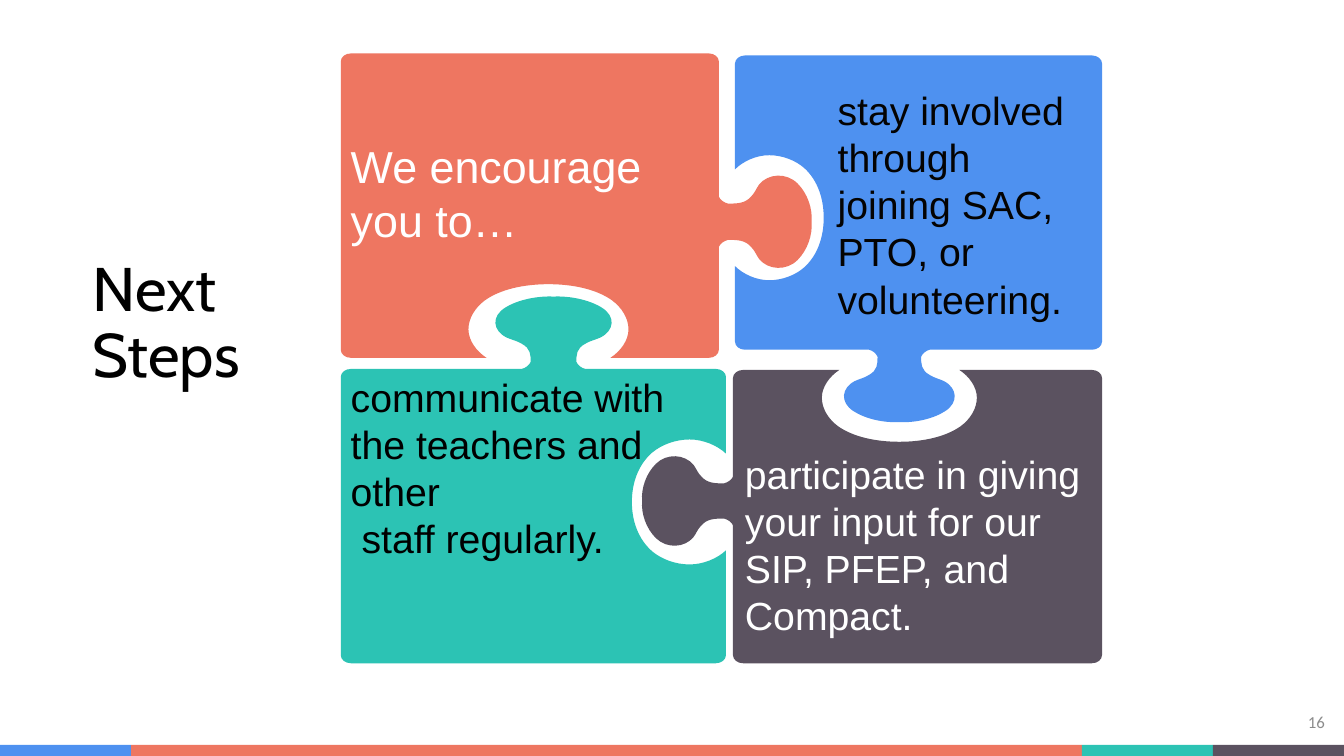
from dataclasses import dataclass

from lxml import etree
from pptx import Presentation
from pptx.dml.color import RGBColor
from pptx.enum.shapes import MSO_SHAPE
from pptx.enum.text import MSO_ANCHOR, MSO_AUTO_SIZE, PP_ALIGN
from pptx.oxml.ns import qn
from pptx.util import Inches, Pt

RECT = MSO_SHAPE.RECTANGLE
TOP = MSO_ANCHOR.TOP
NO_FIT = MSO_AUTO_SIZE.NONE
LEFT, RIGHT = PP_ALIGN.LEFT, PP_ALIGN.RIGHT


@dataclass(frozen=True)
class Theme:
    coral: str = "EE7661"
    blue: str = "4E91F0"
    teal: str = "2CC3B4"
    plum: str = "5B5260"
    black: str = "000000"
    ink: str = "040302"
    white: str = "FFFFFF"
    gray: str = "8C8C8C"
    title_font: str = "Cabin"
    body_font: str = "Arial"
    number_font: str = "Calibri"
    title_size: int = 44
    lead_size: int = 32
    body_size: int = 28
    number_size: int = 12


THEME = Theme()

TITLE = "Next Steps"
PAGE_NUMBER = "16"
INVOLVED = ["stay involved through joining SAC, PTO, or volunteering."]
INPUT = ["participate in giving your input for our SIP, PFEP, and Compact."]

# colour, width; laid side by side along the bottom edge
FOOTER_BANDS = [(THEME.blue, 1.3), (THEME.coral, 9.43),
                (THEME.teal, 1.3), (THEME.plum, 1.3)]
FOOTER_TOP, FOOTER_HEIGHT = 7.39, 0.11

# Half profiles as chained cubic curves: (distance from edge, distance from axis)
KNOB = [(0, .25), (.01, .22), (.05, .19), (.09, .18), (.18, .18), (.26, .18),
        (.32, .25), (.36, .29), (.37, .33), (.4, .37), (.49, .48), (.67, .49),
        (.78, .38), (.88, .28), (.93, .13), (.92, 0)]
SOCKET = [(0, .48), (-.08, .56), (-.21, .62), (-.34, .62), (-.47, .62),
          (-.6, .57), (-.69, .49), (-.82, .37), (-.88, .19), (-.88, 0)]

# colour, body (left, top, right, bottom),
# joints {side: (profile, axis, depth scale, width scale)}, top inset, text size, text colour, lines
PIECES = [
    (THEME.coral, (3.38, .53, 7.13, 3.55),
     {"right": (KNOB, 2.2, 1, 1), "bottom": (SOCKET, 5.44, .83, 1.28)},
     .85, THEME.lead_size, THEME.white, ["We encourage", "you to…"]),
    (THEME.blue, (7.29, .55, 10.93, 3.47),
     {"left": (SOCKET, 2.16, 1, 1), "bottom": (KNOB, 8.92, .78, 1.2)},
     0, THEME.body_size, THEME.ink, []),
    (THEME.teal, (3.38, 3.66, 7.2, 6.58),
     {"top": (KNOB, 5.49, .78, 1.26), "right": (SOCKET, 4.98, 1.06, 1)},
     .77, THEME.body_size, THEME.black,
     ["communicate with the teachers and other", " staff regularly."]),
    (THEME.plum, (7.27, 3.67, 10.93, 6.58),
     {"left": (KNOB, 4.97, .98, .97), "top": (SOCKET, 8.92, .81, 1.24)},
     0, THEME.body_size, THEME.white, []),
]

# left, top, width, height, colour, lines
CAPTIONS = [(8.21, .81, 2.7, 2.46, THEME.ink, INVOLVED),
            (7.29, 4.42, 3.65, 1.99, THEME.white, INPUT)]

CORNER_X, CORNER_Y = .1, .08
ROUNDNESS = .55


def color(code):
    return RGBColor.from_string(code)


def toward(start, end):
    """Control point of a rounded corner, on the way from start to end."""
    return tuple(a + ROUNDNESS * (b - a) for a, b in zip(start, end))


def piece_segments(body, joints):
    """Clockwise segments: one point for a line, three for a cubic curve."""
    left, top, right, bottom = body
    near_x, far_x = left + CORNER_X, right - CORNER_X
    near_y, far_y = top + CORNER_Y, bottom - CORNER_Y
    # side, heading, placing rule, then start, tip and end of its closing corner
    sides = [
        ("top", 1, lambda out, along: (along, top - out),
         (far_x, top), (right, top), (right, near_y)),
        ("right", 1, lambda out, along: (right + out, along),
         (right, far_y), (right, bottom), (far_x, bottom)),
        ("bottom", -1, lambda out, along: (along, bottom + out),
         (near_x, bottom), (left, bottom), (left, far_y)),
        ("left", -1, lambda out, along: (left - out, along),
         (left, near_y), (left, top), (near_x, top)),
    ]
    segments = [[(near_x, top)]]
    for side, heading, place, start, tip, end in sides:
        if side in joints:
            profile, axis, depth, width = joints[side]
            across = [(out, -away) for out, away in profile] + profile[-2::-1]
            points = [place(out * depth, axis + heading * away * width)
                      for out, away in across]
            segments.append(points[:1])
            segments += [points[i:i + 3] for i in range(1, len(points), 3)]
        segments += [[start], [toward(start, tip), toward(end, tip), end]]
    return segments


def curve_lines(shape, segments):
    """Merge the three line steps of each cubic segment into one curve."""
    outline = next(shape.element.iter(qn("a:path")))
    steps = iter(outline.findall(qn("a:lnTo")))
    for segment in segments[1:]:
        lines = [next(steps) for _ in segment]
        if len(lines) == 3:
            curve = etree.Element(qn("a:cubicBezTo"))
            lines[0].addprevious(curve)
            for line in lines:
                curve.append(line[0])
                outline.remove(line)


def paint(shape, fill):
    shape.shadow.inherit = False
    shape.fill.solid()
    shape.fill.fore_color.rgb = color(fill)
    shape.line.fill.background()


def write(frame, lines, font, size, ink, insets, spacing=1.0, align=LEFT):
    """Fill a text frame; insets are (horizontal, top, bottom) in inches."""
    side, top, bottom = insets
    frame.word_wrap = True
    frame.auto_size = NO_FIT
    frame.vertical_anchor = TOP
    frame.margin_left = frame.margin_right = Inches(side)
    frame.margin_top, frame.margin_bottom = Inches(top), Inches(bottom)
    for index, line in enumerate(lines):
        paragraph = frame.add_paragraph() if index else frame.paragraphs[0]
        paragraph.alignment = align
        paragraph.line_spacing = spacing
        run = paragraph.add_run()
        run.text = line
        run.font.name = font
        run.font.size = Pt(size)
        run.font.color.rgb = color(ink)


def add_piece(shapes, fill, body, joints, inset, size, ink, lines):
    segments = piece_segments(body, joints)
    points = [(Inches(x), Inches(y)) for segment in segments for x, y in segment]
    builder = shapes.build_freeform(*points[0])
    builder.add_line_segments(points[1:], close=True)
    piece = builder.convert_to_shape()
    curve_lines(piece, segments)
    paint(piece, fill)
    if lines:
        write(piece.text_frame, lines, THEME.body_font, size, ink, (.1, inset, .05))


def main():
    deck = Presentation()
    deck.slide_width, deck.slide_height = Inches(13.33), Inches(7.5)
    slide = deck.slides.add_slide(deck.slide_layouts[5])
    shapes = slide.shapes

    band_left = 0
    for fill, width in FOOTER_BANDS:
        band = shapes.add_shape(RECT, Inches(band_left), Inches(FOOTER_TOP),
                                Inches(width), Inches(FOOTER_HEIGHT))
        paint(band, fill)
        band_left += width

    title = shapes.title
    title.left, title.top = Inches(.79), Inches(2.42)
    title.width, title.height = Inches(2.78), Inches(1.25)
    write(title.text_frame, [TITLE], THEME.title_font, THEME.title_size,
          THEME.black, (.13, .14, .13), .9)

    number = shapes.add_textbox(Inches(12.47), Inches(6.93), Inches(.8), Inches(.57))
    write(number.text_frame, [PAGE_NUMBER], THEME.number_font, THEME.number_size,
          THEME.gray, (.13, .13, .13), align=RIGHT)

    for piece in PIECES:
        add_piece(shapes, *piece)

    for left, top, width, height, ink, lines in CAPTIONS:
        caption = shapes.add_textbox(Inches(left), Inches(top),
                                     Inches(width), Inches(height))
        write(caption.text_frame, lines, THEME.body_font, THEME.body_size, ink,
              (.1, .05, .05))

    deck.save("out.pptx")


if __name__ == "__main__":
    main()
